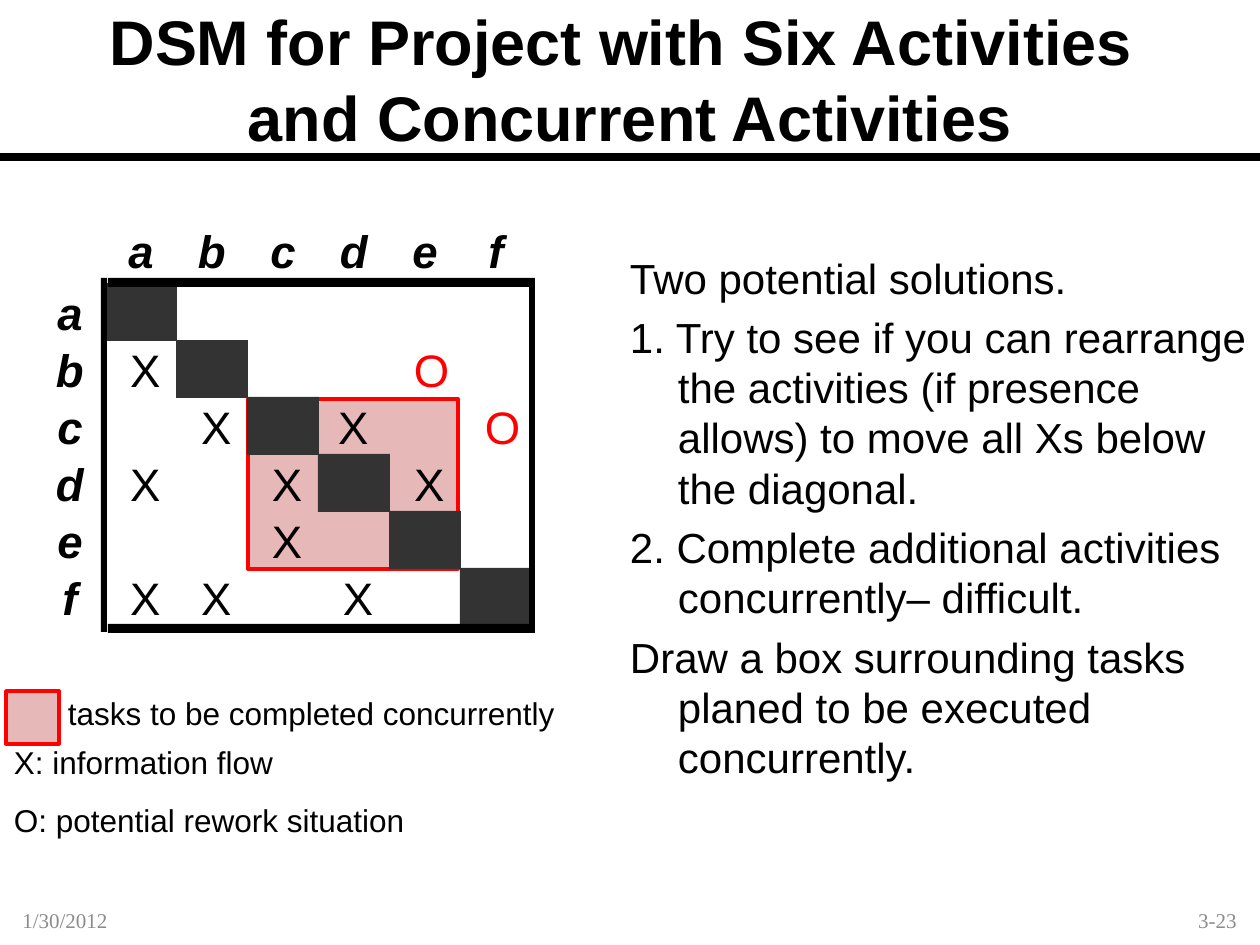
from lxml import etree
from pptx import Presentation
from pptx.dml.color import RGBColor
from pptx.enum.shapes import MSO_CONNECTOR, MSO_SHAPE
from pptx.enum.text import MSO_ANCHOR, MSO_AUTO_SIZE, PP_ALIGN
from pptx.oxml.ns import qn
from pptx.util import Emu, Pt

RECTANGLE = MSO_SHAPE.RECTANGLE
STRAIGHT = MSO_CONNECTOR.STRAIGHT
MIDDLE, TOP = MSO_ANCHOR.MIDDLE, MSO_ANCHOR.TOP
LEFT, CENTER, RIGHT = PP_ALIGN.LEFT, PP_ALIGN.CENTER, PP_ALIGN.RIGHT

BLACK = RGBColor(0x00, 0x00, 0x00)
RED = RGBColor(0xFF, 0x00, 0x00)
PINK = RGBColor(0xE6, 0xB9, 0xB8)
DARK = RGBColor(0x33, 0x33, 0x33)
GRAY = RGBColor(0x8C, 0x8C, 0x8C)

ACTIVITIES = "abcdef"
GLYPH_WIDTHS = {"a": 25, "b": 28, "c": 25, "d": 28, "e": 25, "f": 15,
                "X": 30, "O": 35}
GLYPH_HEIGHT = 54
GRID_LEFT, GRID_TOP = 105, 283
COLUMN, ROW = 71, 57
MARKS = ["      ", "X   O ", " X   O", "X X X ", "  X   ", "XX X  "]
FRAME = [(101, 278, 6, 354), (529, 287, 6, 345),
         (108, 278, 427, 9), (108, 624, 427, 9)]
LEGEND = [("tasks to be completed concurrently", 68, 694, 491),
          ("X: information flow", 14, 743, 262),
          ("O: potential rework situation", 14, 801, 394)]
SOLUTIONS = [
    "Two potential solutions.",
    "1. Try to see if you can rearrange the activities (if presence allows) "
    "to move all Xs below the diagonal.",
    "2. Complete additional activities concurrently– difficult.",
    "Draw a box surrounding tasks planed to be executed concurrently.",
]


def px(length):
    return Emu(round(length * 914400 / 126))


def format_text(shape, size, color=BLACK, font="Arial", bold=False,
                italic=False, align=LEFT, anchor=TOP):
    shape.text_frame.vertical_anchor = anchor
    for paragraph in shape.text_frame.paragraphs:
        paragraph.alignment = align
        for run in paragraph.runs:
            run.font.size = Pt(size)
            run.font.name = font
            run.font.bold = bold
            run.font.italic = italic
            run.font.color.rgb = color


def add_text(slide, text, left, top, width, height, size, wrap=False,
             inset=False, **style):
    shape = slide.shapes.add_textbox(*map(px, (left, top, width, height)))
    frame = shape.text_frame
    frame.text = text
    frame.word_wrap = wrap
    if not inset:
        frame.margin_left = frame.margin_right = 0
        frame.margin_top = frame.margin_bottom = 0
        frame.auto_size = MSO_AUTO_SIZE.SHAPE_TO_FIT_TEXT
    format_text(shape, size, **style)
    return shape


def add_rectangle(slide, left, top, width, height, fill, line=None):
    shape = slide.shapes.add_shape(
        RECTANGLE, *map(px, (left, top, width, height)))
    shape.shadow.inherit = False
    shape.fill.solid()
    shape.fill.fore_color.rgb = fill
    if line is None:
        shape.line.fill.background()
    else:
        shape.line.color.rgb = line
        shape.line.width = Pt(2)


def add_title(slide):
    rule = slide.shapes.add_connector(STRAIGHT, 0, px(157), px(1260), px(157))
    rule.line.color.rgb = BLACK
    rule.line.width = Pt(4.5)
    etree.SubElement(rule._element.spPr, qn("a:effectLst"))
    title = slide.shapes.title
    title.left, title.top, title.width, title.height = map(
        px, (0, 0, 1260, 157))
    title.text_frame.text = ("DSM for Project with Six Activities "
                             "\vand Concurrent Activities")
    format_text(title, 36, bold=True, align=CENTER, anchor=MIDDLE)


def add_glyph(slide, glyph, left, top, **style):
    add_text(slide, glyph, left, top, GLYPH_WIDTHS[glyph], GLYPH_HEIGHT, 26,
             **style)


def add_activity_name(slide, name, center, top):
    add_glyph(slide, name, center - GLYPH_WIDTHS[name] / 2, top,
              bold=True, italic=True)


def add_matrix(slide):
    add_rectangle(slide, 248, 399, 210, 170, PINK, RED)
    for index, name in enumerate(ACTIVITIES):
        left, top = GRID_LEFT + index * COLUMN, GRID_TOP + index * ROW
        add_rectangle(slide, left, top, COLUMN + 1, ROW + 1, DARK)
        add_activity_name(slide, name, left + 36, 223)
        add_activity_name(slide, name, 70, top + 2)
    for row, marks in enumerate(MARKS):
        for column, mark in enumerate(marks):
            if mark != " ":
                add_glyph(slide, mark, GRID_LEFT + column * COLUMN + 25,
                          GRID_TOP + row * ROW + 2,
                          color=RED if mark == "O" else BLACK)
    for bar in FRAME:
        add_rectangle(slide, *bar, BLACK)
    add_glyph(slide, "X", 338, 399)


def add_solutions(slide):
    shape = add_text(slide, "\n".join(SOLUTIONS), 630, 252, 630, 548, 24,
                     wrap=True)
    for paragraph in shape.text_frame.paragraphs:
        paragraph.space_before = Pt(5)
        properties = paragraph._p.get_or_add_pPr()
        properties.set("marL", str(px(48)))
        properties.set("indent", str(-px(48)))


def add_legend(slide):
    for text, left, top, width in LEGEND:
        add_text(slide, text, left, top, width, 38, 18)
    add_rectangle(slide, 6, 691, 53, 53, PINK, RED)


def add_footer(slide):
    for text, left, align in (("1/30/2012", 10, LEFT), ("3-23", 955, RIGHT)):
        add_text(slide, text, left, 895, 294, 50, 12, wrap=True, inset=True,
                 color=GRAY, font="Times New Roman", align=align,
                 anchor=MIDDLE)


def main():
    presentation = Presentation()
    presentation.slide_width, presentation.slide_height = px(1260), px(945)
    slide = presentation.slides.add_slide(presentation.slide_layouts[5])
    add_title(slide)
    add_matrix(slide)
    add_solutions(slide)
    add_legend(slide)
    add_footer(slide)
    presentation.save("out.pptx")


if __name__ == "__main__":
    main()
